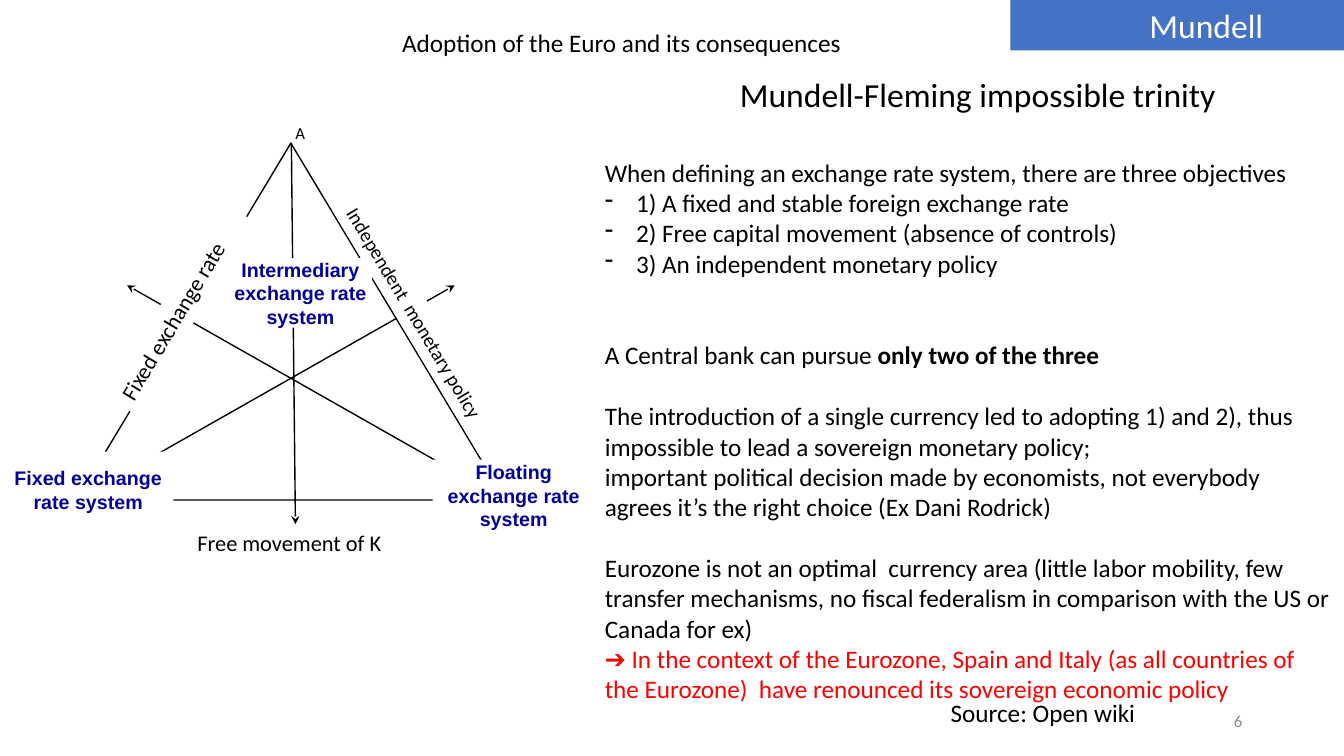
from dataclasses import dataclass

from lxml.etree import SubElement
from pptx import Presentation
from pptx.dml.color import RGBColor
from pptx.enum.shapes import MSO_CONNECTOR, MSO_SHAPE
from pptx.enum.text import MSO_ANCHOR as Anchor, PP_ALIGN as Align
from pptx.oxml.ns import qn
from pptx.slide import Slide
from pptx.text.text import _Paragraph as Paragraph, _Run as Run
from pptx.util import Emu, Pt

PX = 9144  # 100 px to the inch


@dataclass(frozen=True)
class Theme:
    black: str = "000000"
    white: str = "FFFFFF"
    blue: str = "4472C4"
    navy: str = "000099"
    red: str = "FF0000"
    grey: str = "8C8C8C"
    body_font: str = "Calibri"
    system_font: str = "Arial"
    title: int = 24
    body: int = 18
    side: int = 16
    small: int = 14
    tiny: int = 12
    line: int = 1


T = Theme()


@dataclass(frozen=True)
class Label:
    text: str
    box: tuple[int, int, int, int]
    size: int = T.body
    color: str = T.black
    fill: str | None = None
    font: str = T.body_font
    bold: bool = False
    align: Align = Align.LEFT
    anchor: Anchor = Anchor.TOP
    rotation: int = 0
    wrap: bool = True
    inset: int = 10


@dataclass(frozen=True)
class BodyLine:
    text: str
    strong: str = ""
    bullet: bool = False
    before: int = 0
    color: str = T.black


def system_label(text: str, box: tuple[int, int, int, int], inset: int = 10) -> Label:
    return Label(text, box, T.small, T.navy, T.white, T.system_font, True,
                 Align.CENTER, Anchor.MIDDLE, inset=inset)


HEADINGS = [
    Label("Mundell-Fleming impossible trinity", (724, 68, 497, 50), T.title, wrap=False),
    Label("Source: Open wiki", (933, 687, 205, 40), wrap=False),
    Label("Mundell", (1002, 0, 335, 50), T.title, T.white, T.blue, inset=138),
    Label("6", (942, 695, 300, 40), T.tiny, T.grey, align=Align.RIGHT, anchor=Anchor.MIDDLE),
    Label("Adoption of the Euro and its consequences", (389, 22, 461, 40), wrap=False),
]

TRIANGLE_LABELS = [
    Label("A", (283, 117, 25, 30), T.tiny),
    Label("Fixed exchange rate", (66, 288, 225, 37), T.side, fill=T.white, rotation=301),
    Label("Independent  monetary policy", (275, 305, 285, 34), T.small, fill=T.white, rotation=59),
    Label("Free movement of K", (186, 520, 238, 37), T.side, fill=T.white),
    system_label("Fixed exchange rate system", (3, 448, 169, 75)),
    system_label("Floating exchange rate system", (429, 456, 161, 71)),
    system_label("Intermediary exchange rate system", (227, 256, 142, 69), inset=0),
]

TRIANGLE = (76, 142, 425, 354)
ARROWS = [((76, 496), (451, 283)), ((501, 496), (126, 283)), ((289, 142), (293, 520))]

BODY_BOX = (590, 151, 739, 586)
GAP = 22  # one body line, in points
BODY = [
    BodyLine("When defining an exchange rate system, there are three objectives"),
    BodyLine("1) A fixed and stable foreign exchange rate", bullet=True),
    BodyLine("2) Free capital movement (absence of controls)", bullet=True),
    BodyLine("3) An independent monetary policy", bullet=True),
    BodyLine("A Central bank can pursue ", strong="only two of the three", before=2 * GAP),
    BodyLine("The introduction of a single currency led to adopting 1) and 2), thus "
             "impossible to lead a sovereign monetary policy;", before=GAP),
    BodyLine("important political decision made by economists, not everybody agrees "
             "it’s the right choice (Ex Dani Rodrick)"),
    BodyLine("Eurozone is not an optimal  currency area (little labor mobility, few transfer "
             "mechanisms, no fiscal federalism in comparison with the US or Canada for ex)",
             before=GAP),
    BodyLine("➔ In the context of the Eurozone, Spain and Italy (as all countries of the "
             "Eurozone)  have renounced its sovereign economic policy", color=T.red),
]


def px(*values: int) -> list[Emu]:
    return [Emu(v * PX) for v in values]


def style(r: Run, size: int, color: str, font: str = T.body_font, bold: bool = False) -> None:
    r.font.size = Pt(size)
    r.font.name = font
    r.font.bold = bold
    r.font.color.rgb = RGBColor.from_string(color)


def add_label(s: Slide, label: Label) -> None:
    if label.fill:
        sp = s.shapes.add_shape(MSO_SHAPE.RECTANGLE, *px(*label.box))
        sp.shadow.inherit = False
        sp.fill.solid()
        sp.fill.fore_color.rgb = RGBColor.from_string(label.fill)
        sp.line.fill.background()
    else:
        sp = s.shapes.add_textbox(*px(*label.box))
    sp.rotation = label.rotation
    tf = sp.text_frame
    tf.text = label.text
    tf.word_wrap = label.wrap
    tf.vertical_anchor = label.anchor
    tf.margin_left = Emu(label.inset * PX)
    if label.inset == 0:
        tf.margin_right = tf.margin_top = tf.margin_bottom = 0
    p = tf.paragraphs[0]
    p.alignment = label.align
    style(p.runs[0], label.size, label.color, label.font, label.bold)


def add_dash(p: Paragraph) -> None:
    """Give the paragraph a dash bullet with a hanging indent."""
    pPr = p._p.get_or_add_pPr()
    indent = 31 * PX
    pPr.set("marL", str(indent))
    pPr.set("indent", str(-indent))
    SubElement(pPr, qn("a:buChar")).set("char", "-")


def add_body(s: Slide) -> None:
    tf = s.shapes.add_textbox(*px(*BODY_BOX)).text_frame
    tf.word_wrap = True
    for i, line in enumerate(BODY):
        p = tf.add_paragraph() if i else tf.paragraphs[0]
        p.text = line.text
        p.space_before = Pt(line.before)
        style(p.runs[0], T.body, line.color)
        if line.strong:
            r = p.add_run()
            r.text = line.strong
            style(r, T.body, line.color, bold=True)
        if line.bullet:
            add_dash(p)


def add_triangle(s: Slide) -> None:
    sp = s.shapes.add_shape(MSO_SHAPE.ISOSCELES_TRIANGLE, *px(*TRIANGLE))
    sp.shadow.inherit = False
    sp.fill.solid()
    sp.fill.fore_color.rgb = RGBColor.from_string(T.white)
    sp.line.color.rgb = RGBColor.from_string(T.black)
    sp.line.width = Pt(T.line)


def add_arrow(s: Slide, start: tuple[int, int], end: tuple[int, int]) -> None:
    cn = s.shapes.add_connector(MSO_CONNECTOR.STRAIGHT, *px(*start, *end))
    cn.line.color.rgb = RGBColor.from_string(T.black)
    cn.line.width = Pt(T.line)
    SubElement(cn.line._get_or_add_ln(), qn("a:tailEnd")).set("type", "stealth")
    SubElement(cn._element.spPr, qn("a:effectLst"))


def main() -> None:
    prs = Presentation()
    prs.slide_width, prs.slide_height = px(1333, 750)
    s = prs.slides.add_slide(prs.slide_layouts[6])
    add_body(s)
    add_triangle(s)
    for start, end in ARROWS:
        add_arrow(s, start, end)
    for label in TRIANGLE_LABELS + HEADINGS:
        add_label(s, label)
    prs.save("out.pptx")


if __name__ == "__main__":
    main()
